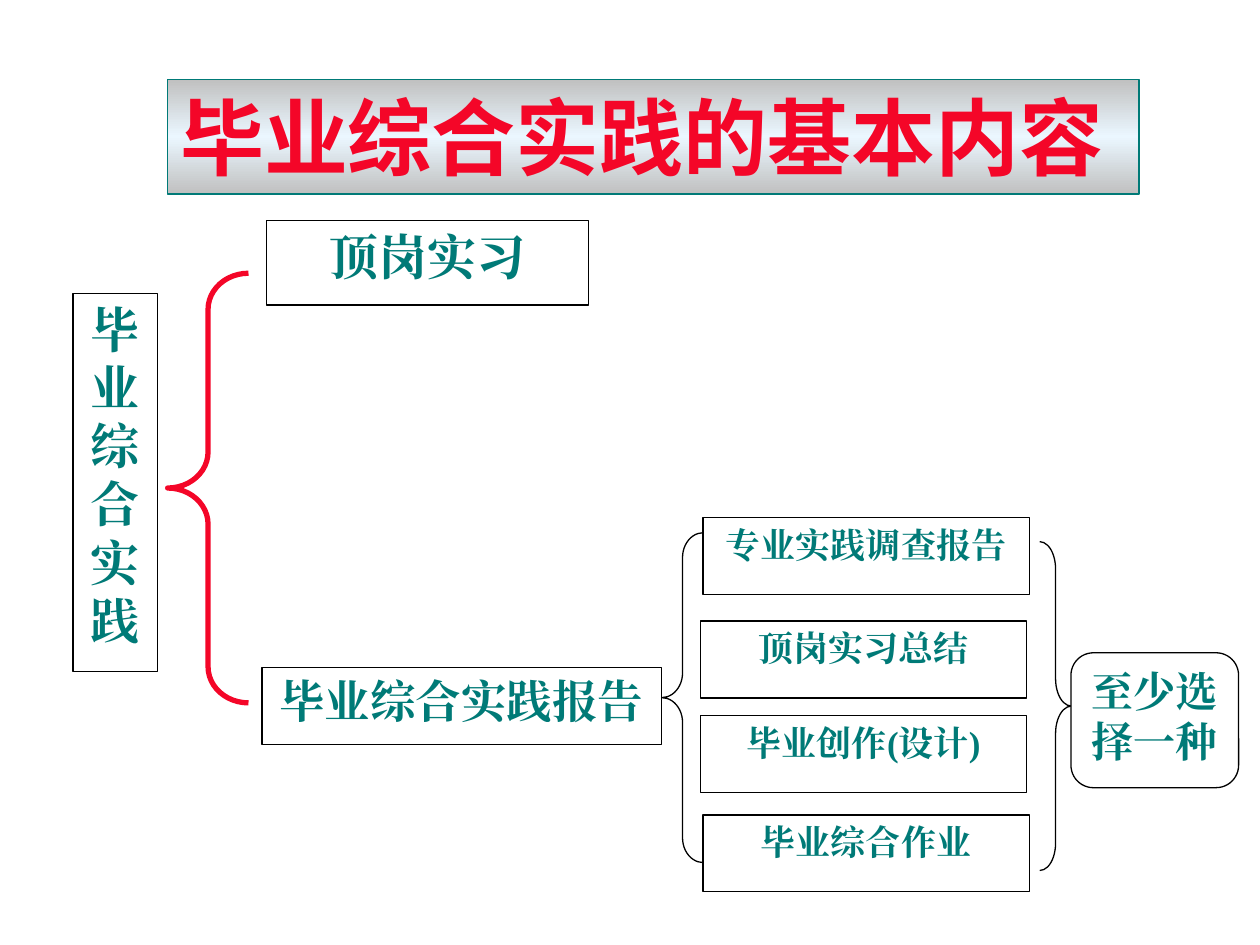
from copy import deepcopy
from dataclasses import dataclass

from lxml import etree
from pptx import Presentation
from pptx.dml.color import RGBColor
from pptx.enum.shapes import MSO_SHAPE
from pptx.enum.text import MSO_ANCHOR, PP_ALIGN
from pptx.oxml.ns import qn
from pptx.util import Cm, Pt

RECT = MSO_SHAPE.RECTANGLE
ROUNDED = MSO_SHAPE.ROUNDED_RECTANGLE
LEFT_BRACE = MSO_SHAPE.LEFT_BRACE
RIGHT_BRACE = MSO_SHAPE.RIGHT_BRACE
LEFT, CENTER = PP_ALIGN.LEFT, PP_ALIGN.CENTER
TOP, MIDDLE = MSO_ANCHOR.TOP, MSO_ANCHOR.MIDDLE


@dataclass(frozen=True)
class Theme:
    red: str = "F40628"
    teal: str = "007A77"
    black: str = "000000"
    white: str = "FFFFFF"
    banner: tuple = ("C0C0C0", "EBF7FF", "C0C0C0")
    title_font: str = "Noto Sans CJK JP"
    body_font: str = "Times New Roman"
    title: int = 48
    branch: int = 28
    report: int = 26
    note: int = 24
    option: int = 20
    leading: float = 1.19
    thin: float = 0.75
    thick: float = 3


class Diagram:
    def __init__(self, slide, theme):
        self.slide = slide
        self.theme = theme

    def shape(self, kind, box, color, width):
        sp = self.slide.shapes.add_shape(kind, *(Cm(v) for v in box))
        sp.shadow.inherit = False
        sp.line.color.rgb = RGBColor.from_string(color)
        sp.line.width = Pt(width)
        return sp

    def add_text(self, sp, lines, size, color, font, align, anchor):
        tf = sp.text_frame
        tf.word_wrap = True
        tf.vertical_anchor = anchor
        for i, line in enumerate(lines):
            p = tf.add_paragraph() if i else tf.paragraphs[0]
            p.alignment = align
            p.line_spacing = Pt(round(size * self.theme.leading, 1))
            r = p.add_run()
            r.text = line
            r.font.size = Pt(size)
            r.font.bold = True
            r.font.color.rgb = RGBColor.from_string(color)
            r.font.name = font
            # East Asian characters take their own typeface element
            ea = etree.SubElement(r.font._element, qn("a:ea"))
            ea.set("typeface", font)

    def banner(self, text, box):
        t = self.theme
        sp = self.shape(RECT, box, t.teal, t.thin)
        sp.fill.gradient()
        sp.fill.gradient_angle = 90
        stops = sp._element.spPr.find(".//" + qn("a:gsLst"))
        stops.append(deepcopy(stops[-1]))
        for i, (stop, color) in enumerate(zip(sp.fill.gradient_stops, t.banner)):
            stop.position = i / 2
            stop.color.rgb = RGBColor.from_string(color)
        self.add_text(sp, [text], t.title, t.red, t.title_font, LEFT, MIDDLE)

    def label(self, lines, box, size, kind=RECT):
        t = self.theme
        sp = self.shape(kind, box, t.black, t.thin)
        sp.fill.solid()
        sp.fill.fore_color.rgb = RGBColor.from_string(t.white)
        self.add_text(sp, lines, size, t.teal, t.body_font, CENTER, TOP)

    def brace(self, kind, box, curve, color, width):
        sp = self.shape(kind, box, color, width)
        sp.fill.background()
        sp.adjustments[0] = curve


def main():
    prs = Presentation()
    prs.slide_width, prs.slide_height = Cm(25.4), Cm(19.05)
    t = Theme()
    d = Diagram(prs.slides.add_slide(prs.slide_layouts[6]), t)

    # Title
    d.banner("毕业综合实践的基本内容", (3.38, 1.6, 19.58, 2.31))

    # Root, one character per line, and its two branches
    d.label("毕业综合实践", (1.47, 5.92, 1.7, 7.62), t.branch)
    d.brace(LEFT_BRACE, (3.38, 5.51, 1.63, 8.66), 0.446, t.red, t.thick)
    d.label(["顶岗实习"], (5.38, 4.45, 6.48, 1.7), t.branch)
    d.label(["毕业综合实践报告"], (5.28, 13.46, 8.05, 1.55), t.report)

    # Report options
    d.brace(LEFT_BRACE, (13.34, 10.74, 0.84, 6.65), 0.596, t.black, t.thin)
    options = [
        ("专业实践调查报告", 14.17, 10.44),
        ("顶岗实习总结", 14.12, 12.52),
        ("毕业创作(设计)", 14.12, 14.43),
        ("毕业综合作业", 14.17, 16.43),
    ]
    for text, left, top in options:
        d.label([text], (left, top, 6.58, 1.55), t.option)

    # Rule for choosing
    d.brace(RIGHT_BRACE, (20.96, 10.92, 0.64, 6.63), 0.86, t.black, t.thin)
    d.label(["至少选择一种"], (21.59, 13.16, 3.38, 2.72), t.note, ROUNDED)

    prs.save("out.pptx")


if __name__ == "__main__":
    main()
